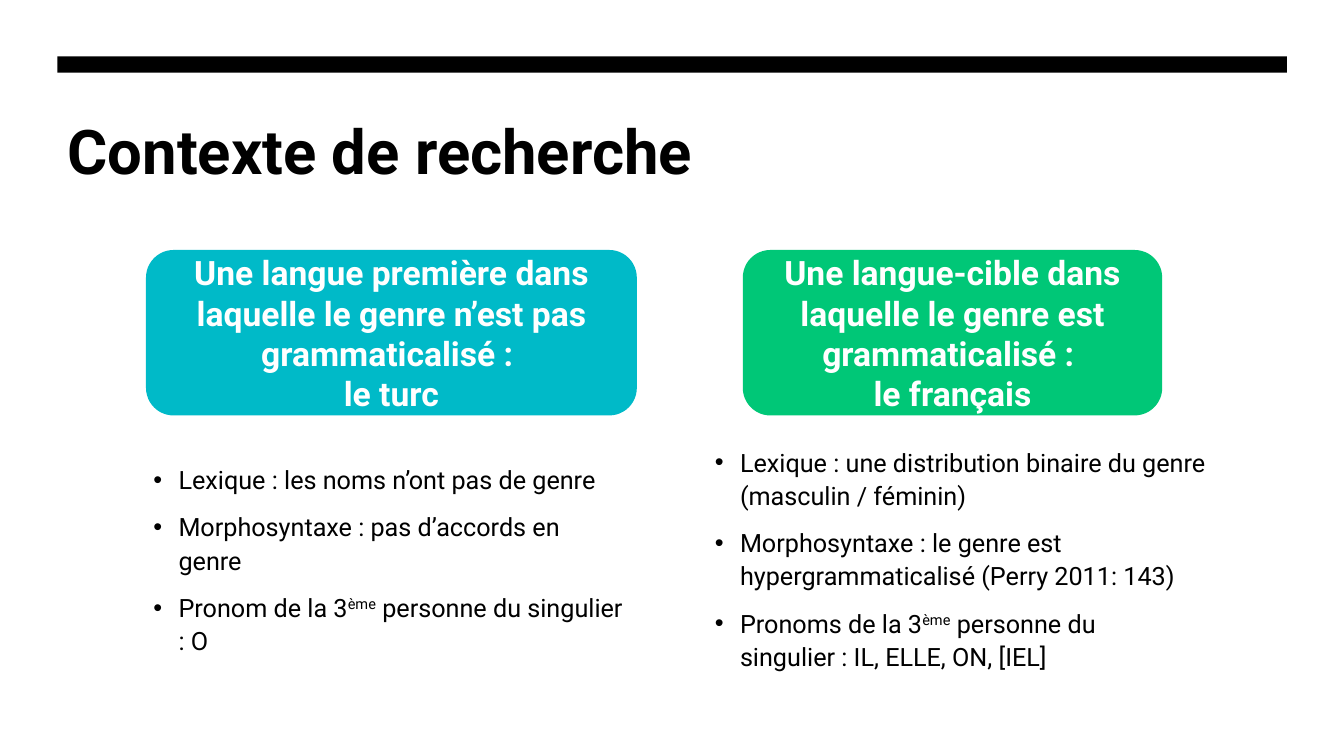
from dataclasses import dataclass

from lxml.etree import SubElement
from pptx import Presentation
from pptx.dml.color import RGBColor
from pptx.enum.shapes import MSO_SHAPE
from pptx.enum.text import MSO_ANCHOR, MSO_AUTO_SIZE, PP_ALIGN
from pptx.oxml.ns import qn
from pptx.util import Cm, Pt


@dataclass(frozen=True)
class Theme:
    font: str = "Roboto"
    ink: RGBColor = RGBColor(0x00, 0x00, 0x00)
    paper: RGBColor = RGBColor(0xFF, 0xFF, 0xFF)
    turquoise: RGBColor = RGBColor(0x00, 0xBA, 0xC8)
    green: RGBColor = RGBColor(0x00, 0xC7, 0x77)
    title_size: Pt = Pt(44)
    heading_size: Pt = Pt(24)
    body_size: Pt = Pt(18)


theme = Theme()
title_format = {"name": theme.font, "size": theme.title_size, "bold": True}
heading_format = {"name": theme.font, "size": theme.heading_size, "bold": True}
body_format = {"name": theme.font, "size": theme.body_size, "bold": False}


def add_span(para, text, font_format, color):
    span = para.add_run()
    span.text = text
    for name, value in font_format.items():
        setattr(span.font, name, value)
    span.font.color.rgb = color
    return span


def add_block(page, shape_kind, place, color):
    """Add a plain filled shape without outline or shadow."""
    block = page.shapes.add_shape(shape_kind, *map(Cm, place))
    block.shadow.inherit = False
    block.fill.solid()
    block.fill.fore_color.rgb = color
    block.line.fill.background()
    return block


# Places are left, top, width, height in centimetres.
# Each bullet is a list of pieces; every second piece is superscript.
columns = [
    {
        "heading": ["Une langue première dans laquelle le genre n’est pas grammaticalisé : ", "le turc"],
        "color": theme.turquoise,
        "heading_place": (3.68, 6.3, 12.37, 4.17),
        "list_place": (3.61, 11.5, 12.45, 6.9),
        "bullets": [
            ["Lexique : les noms n’ont pas de genre"],
            ["Morphosyntaxe : pas d’accords en genre"],
            ["Pronom de la 3", "ème", " personne du singulier : O"],
        ],
    },
    {
        "heading": ["Une langue-cible dans laquelle le genre est grammaticalisé : ", "le français"],
        "color": theme.green,
        "heading_place": (18.72, 6.3, 10.57, 4.17),
        "list_place": (17.76, 11.06, 12.9, 7.5),
        "bullets": [
            ["Lexique : une distribution binaire du genre (masculin / féminin)"],
            ["Morphosyntaxe : le genre est hypergrammaticalisé (Perry 2011: 143)"],
            ["Pronoms de la 3", "ème", " personne du singulier : IL, ELLE, ON, [IEL]"],
        ],
    },
]

deck = Presentation()
deck.slide_width, deck.slide_height = Cm(33.87), Cm(19.05)
page = deck.slides.add_slide(deck.slide_layouts[3])
title, *lists = page.placeholders

add_block(page, MSO_SHAPE.RECTANGLE, (1.45, 1.42, 30.98, 0.41), theme.ink)

title_place = (1.45, 2.72, 30.98, 4.06)
places = [title_place] + [column["list_place"] for column in columns]
for box, place in zip([title, *lists], places):
    box.left, box.top, box.width, box.height = map(Cm, place)
    box.text_frame.auto_size = MSO_AUTO_SIZE.NONE
    box.text_frame.vertical_anchor = MSO_ANCHOR.TOP

title_para = title.text_frame.paragraphs[0]
title_para.alignment = PP_ALIGN.LEFT
add_span(title_para, "Contexte de recherche", title_format, theme.ink)

for column, box in zip(columns, lists):
    for index, pieces in enumerate(column["bullets"]):
        para = box.text_frame.add_paragraph() if index else box.text_frame.paragraphs[0]
        para.line_spacing = 1.1
        para.space_before = Pt(10 if index else 0)
        properties = para._p.get_or_add_pPr()
        properties.set("marL", str(Cm(0.635)))
        properties.set("indent", str(-Cm(0.635)))
        SubElement(properties, qn("a:buFont"), typeface="Arial")
        SubElement(properties, qn("a:buChar"), char="•")
        for position, piece in enumerate(pieces):
            span = add_span(para, piece, body_format, theme.ink)
            if position % 2:
                span._r.get_or_add_rPr().set("baseline", "30000")

    heading = add_block(page, MSO_SHAPE.ROUNDED_RECTANGLE, column["heading_place"], column["color"])
    heading.text_frame.word_wrap = True
    heading.text_frame.vertical_anchor = MSO_ANCHOR.MIDDLE
    for index, line in enumerate(column["heading"]):
        para = heading.text_frame.add_paragraph() if index else heading.text_frame.paragraphs[0]
        para.alignment = PP_ALIGN.CENTER
        add_span(para, line, heading_format, theme.paper)

deck.save("out.pptx")
